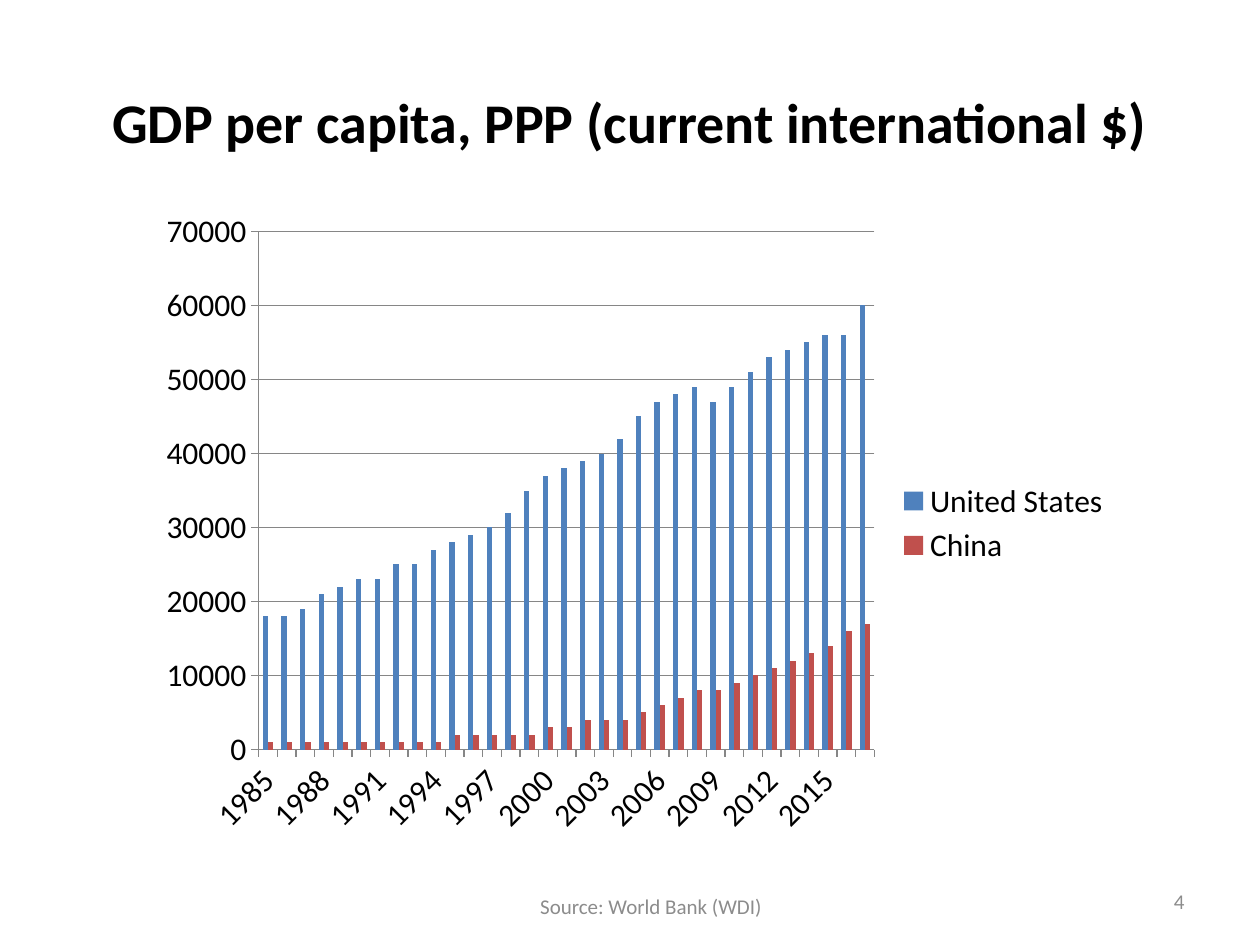
from dataclasses import dataclass

from pptx import Presentation, util as u
from pptx.chart import data as cd
from pptx.dml import color as col
from pptx.enum import chart as ce, text as te

Pt = u.Pt


@dataclass(frozen=True)
class Theme:
    """Colours, font and type sizes."""
    face: str = "Calibri"
    ink: str = "000000"
    mute: str = "8C8C8C"
    rule: str = "868686"
    us: str = "4F81BD"
    china: str = "C0504D"
    head: int = 32
    body: int = 18
    note: int = 12


THEME = Theme()
US = [18, 18, 19, 21, 22, 23, 23, 25, 25, 27, 28, 29, 30, 32, 35, 37, 38,
      39, 40, 42, 45, 47, 48, 49, 47, 49, 51, 53, 54, 55, 56, 56, 60]
CHINA = [1, 1, 1, 1, 1, 1, 1, 1, 1, 1, 2, 2, 2, 2, 2, 3, 3,
         4, 4, 4, 5, 6, 7, 8, 8, 9, 10, 11, 12, 13, 14, 16, 17]


def rgb(code):
    """Turn a hex code into a colour."""
    return col.RGBColor.from_string(code)


def put(item, form):
    """Set each format value on an object."""
    for name, value in form.items():
        setattr(item, name, value)


def ink(font, size, tint, bold=False):
    """Style a font from the theme."""
    put(font, {"name": THEME.face, "size": Pt(size), "bold": bold})
    font.color.rgb = rgb(tint)


def label(slide, words, box, align, size, tint, bold=False, **form):
    """Add one line of text in a box."""
    frame = slide.shapes.add_textbox(*map(Pt, box)).text_frame
    put(frame, {"word_wrap": True,
                "vertical_anchor": te.MSO_ANCHOR.MIDDLE, **form})
    para = frame.paragraphs[0]
    para.alignment = align
    run = para.add_run()
    run.text = words
    ink(run.font, size, tint, bold)


def axis(item, grid):
    """Style one axis of the chart."""
    put(item, {"has_major_gridlines": grid,
               "major_tick_mark": ce.XL_TICK_MARK.OUTSIDE,
               "minor_tick_mark": ce.XL_TICK_MARK.NONE})
    lines = [item.format.line]
    if grid:
        lines.append(item.major_gridlines.format.line)
    for line in lines:
        line.color.rgb = rgb(THEME.rule)
        line.width = Pt(0.75)


def columns(slide, box, years, rows):
    """Add the clustered column chart."""
    data = cd.CategoryChartData()
    data.categories = [str(year) for year in years]
    for name, vals, _ in rows:
        data.add_series(name, [val * 1000 for val in vals])
    kind = ce.XL_CHART_TYPE.COLUMN_CLUSTERED
    chart = slide.shapes.add_chart(kind, *map(Pt, box), data).chart
    put(chart, {"has_title": False, "has_legend": True})
    put(chart.legend, {"position": ce.XL_LEGEND_POSITION.RIGHT,
                       "include_in_layout": False})
    ink(chart.font, THEME.body, THEME.ink)
    axis(chart.category_axis, False)
    axis(chart.value_axis, True)
    put(chart.value_axis, {"minimum_scale": 0, "maximum_scale": 70000,
                           "major_unit": 10000})
    plot = chart.plots[0]
    put(plot, {"gap_width": 150, "overlap": 0, "vary_by_categories": False})
    for bars, (_, _, tint) in zip(plot.series, rows):
        bars.format.fill.solid()
        bars.format.fill.fore_color.rgb = rgb(tint)


def main():
    """Build and save the slide."""
    deck = Presentation()
    put(deck, {"slide_width": Pt(720), "slide_height": Pt(540)})
    slide = deck.slides.add_slide(deck.slide_layouts[6])
    side = te.PP_ALIGN
    label(slide, "GDP per capita, PPP (current international $)",
          (54, 36, 612, 66), side.CENTER, THEME.head, THEME.ink, True)
    label(slide, "Source: World Bank (WDI)", (132, 456, 480, 84),
          side.CENTER, THEME.note, THEME.mute,
          vertical_anchor=te.MSO_ANCHOR.BOTTOM, margin_bottom=Pt(15))
    columns(slide, (84, 114, 558, 370), range(1985, 2018),
            [("United States", US, THEME.us), ("China", CHINA, THEME.china)])
    label(slide, "4", (516, 500.5, 168, 28.75), side.RIGHT,
          THEME.note, THEME.mute)
    deck.save("out.pptx")


if __name__ == "__main__":
    main()
